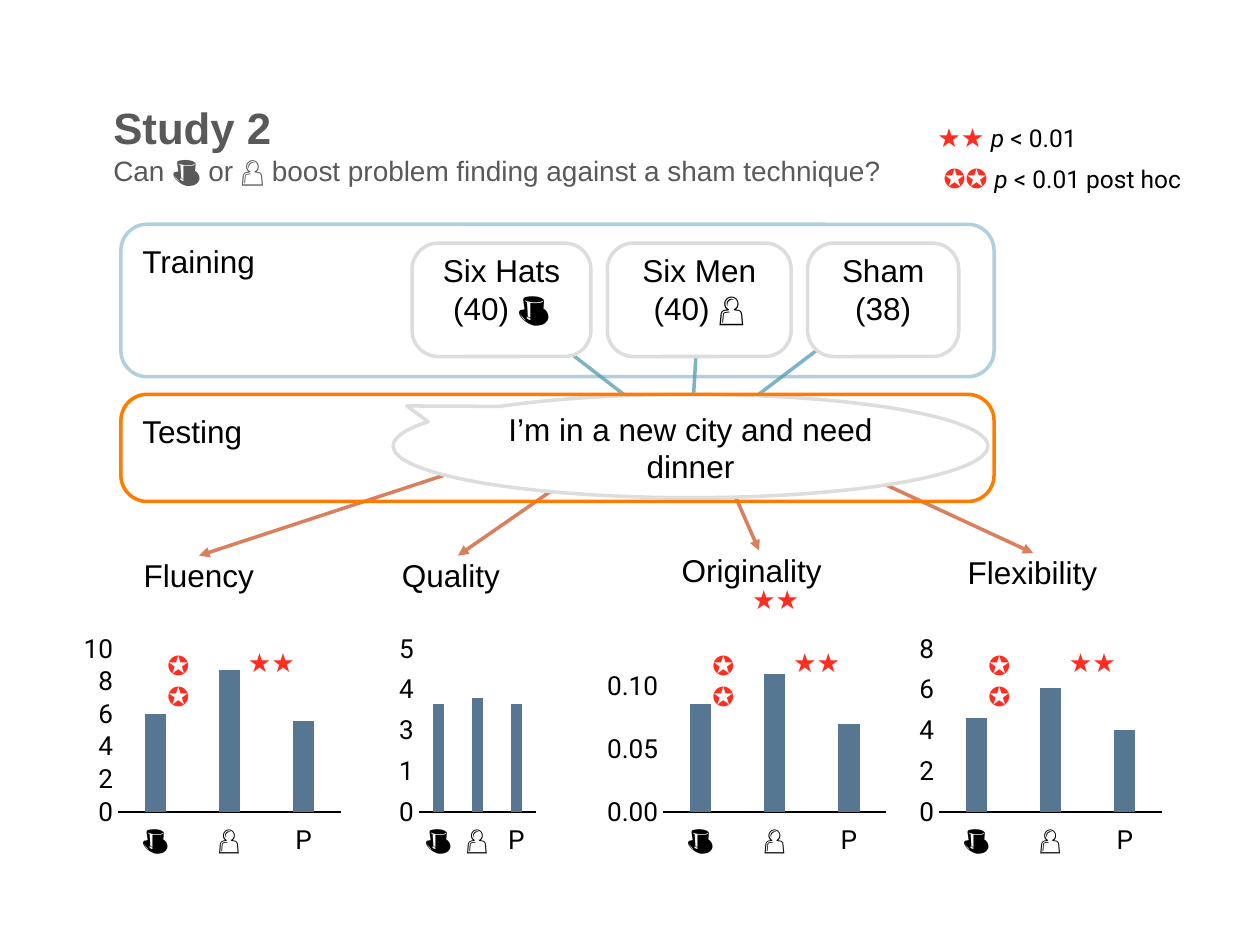
import pptx
import pptx.chart.data
import pptx.dml.color
import pptx.enum.chart
import pptx.enum.shapes
import pptx.enum.text
import pptx.oxml
import pptx.oxml.ns
import pptx.util
from lxml import etree

# Content: positions are in grid cells, 100 columns by 75 rows
COLUMNS, ROWS = 100, 75
THEME = {
    "font": "Arial", "data_font": "Roboto",
    "heading": 25, "subheading": 16, "body": 18, "data": 15, "note": 14,
    "text": "000000", "grey": "595959", "white": "FFFFFF", "mark": "FF2D21",
    "bar": "567691", "outline": "DDDDDD", "training": "589DB6",
    "testing": "FF7C00", "arrow": "DA7F5E",
}
TITLE = "Study 2"
QUESTION = "Can 🎩 or 👤 boost problem finding against a sham technique?"
SCENARIO = "I’m in a new city and need dinner"
STARS, POST_HOC = "★★", "✪✪"
# name, left, top, width, height, corner, colour, opacity, name top
STAGES = [
    ("Training", 9.6, 17.8, 69.3, 12.1, 0.172, "training", 48, 19.2),
    ("Testing", 9.6, 31.3, 69.3, 8.5, 0.245, "testing", 100, 32.7),
]
# lines of text, left, width
GROUPS = [
    (["Six Hats (40) 🎩"], 32.7, 14.2),
    (["Six Men (40) 👤"], 48.2, 14.6),
    (["Sham", "(38)"], 64.1, 12),
]
GROUP_TOP, GROUP_HEIGHT = 19.3, 9
CALLOUT = (31.2, 31.3, 47.2, 8.2)
CATEGORIES = ["🎩", "👤", "P"]
MEASURES = [
    dict(name="Fluency", label=(11.4, 44.1, 8.8), chart=(5.2, 21.9), plot=0.191,
         values=[6, 8.7, 5.6], top=10, step=2, format="0", marked=True),
    dict(name="Quality", label=(31.9, 44.1, 8.9), chart=(30.2, 12.4), plot=0.245,
         values=[3.3, 3.5, 3.3], top=5, step=1.25, format="0", marked=False),
    dict(name="Originality", label=(54.1, 43.7, 12.3), chart=(46.7, 23.7), plot=0.251,
         values=[0.086, 0.11, 0.07], top=0.13, step=0.05, format="0.00", marked=True),
    dict(name="Flexibility", label=(76.8, 43.9, 10.4), chart=(71.5, 20.8), plot=0.146,
         values=[4.6, 6.1, 4], top=8, step=2, format="General", marked=True),
]
CHART_TOP, CHART_HEIGHT = 49, 20
PLOT_TOP, PLOT_HEIGHT = 0.125, 0.647

presentation = pptx.Presentation()
presentation.slide_width = pptx.util.Inches(10)
presentation.slide_height = pptx.util.Inches(7.5)
slide = presentation.slides.add_slide(presentation.slide_layouts[6])


def place(left, top, *size):
    units = (presentation.slide_width / COLUMNS, presentation.slide_height / ROWS) * 2
    return [round(cells * unit) for cells, unit in zip((left, top, *size), units)]


def color(name):
    return pptx.dml.color.RGBColor.from_string(THEME[name])


def set_font(font, size="body", tint="text", face="font", bold=False, italic=False):
    font.name, font.size = THEME[face], pptx.util.Pt(THEME[size])
    font.bold, font.italic = bold, italic
    font.color.rgb = color(tint)


def add_run(paragraph, text, **style):
    run = paragraph.add_run()
    run.text = text
    set_font(run.font, **style)


def prepare_frame(shape, inset=0, wrap=True):
    frame = shape.text_frame
    frame.word_wrap = wrap
    frame.vertical_anchor = pptx.enum.text.MSO_ANCHOR.TOP
    for side in ("left", "right", "top", "bottom"):
        setattr(frame, "margin_" + side, pptx.util.Inches(inset))
    return frame


def add_text(box, runs, inset=0, wrap=False):
    paragraph = prepare_frame(slide.shapes.add_textbox(*place(*box)), inset, wrap).paragraphs[0]
    for text, style in runs:
        add_run(paragraph, text, **style)
    return paragraph


def add_mark(left, top, text, width=5.4):
    add_text((left, top, width, 3.1), [(text, MARK)], 0.06, wrap=text == POST_HOC)


def set_line(line, tint, opacity=100):
    line.color.rgb = color(tint)
    line.width = pptx.util.Pt(2)
    if opacity < 100:
        fill = line._ln.find(".//" + pptx.oxml.ns.qn("a:srgbClr"))
        etree.SubElement(fill, pptx.oxml.ns.qn("a:alpha"), val=str(opacity * 1000))


def add_arrow(start, end, tint, opacity=100):
    connector = slide.shapes.add_connector(
        pptx.enum.shapes.MSO_CONNECTOR.STRAIGHT, *place(*start), *place(*end))
    set_line(connector.line, tint, opacity)
    etree.SubElement(connector.line._ln, pptx.oxml.ns.qn("a:tailEnd"), type="triangle")
    etree.SubElement(connector._element.spPr, pptx.oxml.ns.qn("a:effectLst"))


def add_outline(kind, box, adjustments, tint, lines=(), opacity=100):
    shape = slide.shapes.add_shape(kind, *place(*box))
    shape.shadow.inherit = False
    for index, value in enumerate(adjustments):
        shape.adjustments[index] = value
    set_line(shape.line, tint, opacity)
    if not lines:
        shape.fill.background()
        return
    shape.fill.solid()
    shape.fill.fore_color.rgb = color("white")
    frame = prepare_frame(shape)
    for index, text in enumerate(lines):
        paragraph = frame.add_paragraph() if index else frame.paragraphs[0]
        paragraph.alignment = pptx.enum.text.PP_ALIGN.CENTER
        add_run(paragraph, text)


def add_bar_chart(measure):
    data = pptx.chart.data.CategoryChartData()
    data.categories = CATEGORIES
    data.add_series(measure["name"], measure["values"])
    left, width = measure["chart"]
    chart = slide.shapes.add_chart(
        pptx.enum.chart.XL_CHART_TYPE.COLUMN_CLUSTERED,
        *place(left, CHART_TOP, width, CHART_HEIGHT), data).chart
    chart.has_title = chart.has_legend = False
    set_font(chart.font, "data", face="data_font")
    plot = chart.plots[0]
    plot.gap_width, plot.overlap, plot.vary_by_categories = 250, -10, False
    bars = plot.series[0].format.fill
    bars.solid()
    bars.fore_color.rgb = color("bar")
    for axis in (chart.category_axis, chart.value_axis):
        axis.has_major_gridlines = False
        axis.major_tick_mark = axis.minor_tick_mark = pptx.enum.chart.XL_TICK_MARK.NONE
        set_font(axis.tick_labels.font, "data", face="data_font")
    chart.category_axis.tick_label_position = pptx.enum.chart.XL_TICK_LABEL_POSITION.LOW
    base = chart.category_axis.format.line
    base.color.rgb, base.width = color("text"), pptx.util.Pt(1)
    values = chart.value_axis
    values.format.line.fill.background()
    values.minimum_scale, values.maximum_scale = 0, measure["top"]
    values.major_unit = measure["step"]
    values.tick_labels.number_format = measure["format"]
    values.tick_labels.number_format_is_linked = False
    # Fixed inner plot area
    area = chart._chartSpace.chart.plotArea
    for old in area.findall(pptx.oxml.ns.qn("c:layout")):
        area.remove(old)
    settings = dict(layoutTarget="inner", xMode="edge", yMode="edge", x=measure["plot"],
                    y=PLOT_TOP, w=1 - measure["plot"], h=PLOT_HEIGHT)
    layout = etree.Element(pptx.oxml.ns.qn("c:layout"))
    manual = etree.SubElement(layout, pptx.oxml.ns.qn("c:manualLayout"))
    for tag, value in settings.items():
        etree.SubElement(manual, pptx.oxml.ns.qn("c:" + tag), val=str(value))
    area.insert(0, layout)


MARK = dict(size="data", tint="mark", face="data_font")
NOTE = dict(size="note", face="data_font")
SHAPES = pptx.enum.shapes.MSO_SHAPE

# Heading
heading = add_text((8.5, 7.5, 63, 7.9),
                   [(TITLE, dict(size="heading", tint="grey", bold=True))], 0.05, wrap=True)
heading.add_line_break()
add_run(heading, QUESTION, size="subheading", tint="grey")

# Arrows from the groups to the scenario, and on to the measures
left, top, width, height = CALLOUT
center = left + width / 2
for _, group_left, group_width in GROUPS:
    add_arrow((group_left + group_width / 2, GROUP_TOP + GROUP_HEIGHT / 2),
              (center, top + height / 2), "training", 76)
for measure in MEASURES:
    label_left, label_top, label_width = measure["label"]
    add_arrow((center, top), (label_left + label_width / 2, label_top), "arrow")

# Charts with their labels and significance marks
for measure in MEASURES:
    add_bar_chart(measure)
    add_text((*measure["label"], 3), [(measure["name"], {})])
    if measure["marked"]:
        chart_left, chart_width = measure["chart"]
        plot_left = chart_left + measure["plot"] * chart_width
        add_mark(plot_left + 9.7, 50.7, STARS)
        add_mark(plot_left + 3.3, 50.9, POST_HOC, 4.5)
add_mark(59.1, 45.7, STARS)

# Scenario, groups and stage frames
add_outline(SHAPES.OVAL_CALLOUT, CALLOUT, (-0.477, -0.388), "outline", [SCENARIO])
for lines, group_left, group_width in GROUPS:
    add_outline(SHAPES.ROUNDED_RECTANGLE, (group_left, GROUP_TOP, group_width, GROUP_HEIGHT),
                (0.231,), "outline", lines)
for name, *box, corner, tint, opacity, name_top in STAGES:
    add_outline(SHAPES.ROUNDED_RECTANGLE, box, (corner,), tint, opacity=opacity)
    add_text((11.3, name_top, 10.1, 3.8), [(name, {})])

# Key to the marks
for box, mark, meaning in [((73.8, 9, 13, 3.5), STARS, " < 0.01"),
                           ((74.3, 12.3, 20.1, 3.6), POST_HOC, " < 0.01 post hoc")]:
    add_text(box, [(mark + " ", MARK), ("p", dict(NOTE, italic=True)), (meaning, NOTE)],
             0.06, wrap=True)

presentation.save("out.pptx")
